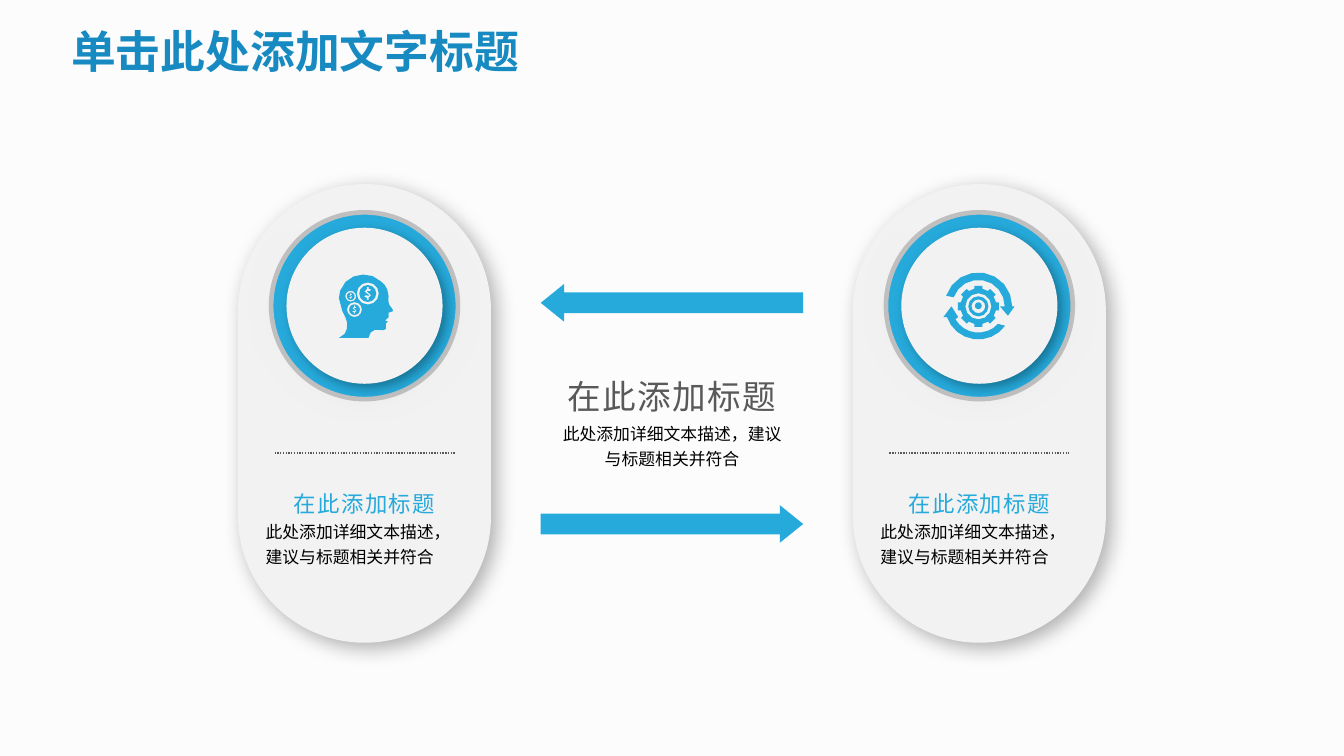
from math import cos, radians, sin

from lxml import etree
from pptx import Presentation
from pptx.dml.color import RGBColor
from pptx.enum.dml import MSO_LINE
from pptx.enum.shapes import MSO_CONNECTOR, MSO_SHAPE
from pptx.enum.text import MSO_ANCHOR, PP_ALIGN
from pptx.oxml.ns import qn
from pptx.util import Cm, Pt

FONT = "Noto Sans CJK SC"
C = {"bg": "FCFCFC", "title": "178AC1", "blue": "26AADB", "card": "F2F2F2",
     "ring": "BFBFBF", "white": "FFFFFF", "grey": "595959", "black": "000000",
     "deep": "12556E"}

TITLE = "单击此处添加文字标题"
HEAD = "在此添加标题"
BODY = "此处添加详细文本描述，建议与标题相关并符合"

CARD_X = {"head": 6.89, "gear": 18.51}
MID_X, DISC_Y = 12.7, 5.78
ARROWS = [(MSO_SHAPE.LEFT_ARROW, 5.37), (MSO_SHAPE.RIGHT_ARROW, 9.55)]
TEXTS = [
    (x, top, w, h, text, dict(size=Pt(size), color=C[color]), spc, align, gap)
    for x, rows in [(x, [(9.65, 4.24, 1.17, BODY, 9, "black", 0, PP_ALIGN.LEFT, 1.25),
                         (9.14, 4.9, 0.76, HEAD, 12, "blue", 80, PP_ALIGN.CENTER, 1)])
                    for x in CARD_X.values()]
    + [(MID_X, [(7.8, 4.75, 1.17, BODY, 9, "black", 0, PP_ALIGN.CENTER, 1.25),
                (6.98, 4.5, 1.02, HEAD, 18, "grey", 80, PP_ALIGN.CENTER, 1)])]
    for top, w, h, text, size, color, spc, align, gap in rows
]

PROFILE = [(175, -75), (165, -125), (145, -160), (115, -187), (55, -225), (-15, -236),
           (-85, -222), (-145, -182), (-186, -115), (-195, -60), (-170, 35), (-145, 85),
           (-133, 125), (-136, 170), (-152, 205), (-195, 236), (25, 236), (42, 195),
           (75, 175), (135, 178), (155, 170), (155, 128), (170, 115), (148, 106),
           (175, 82), (174, 48), (205, 38), (207, 27), (180, -12), (172, -40)]
DOLLAR = [(0.1, 0.5), (0.1, 0.75), (-0.1, 0.75), (-0.1, 0.52), (-0.4, 0.42), (-0.33, 0.22),
          (0.12, 0.26), (0.12, 0.16), (-0.38, -0.2), (-0.1, -0.56), (-0.1, -0.78),
          (0.1, -0.78), (0.1, -0.58), (0.36, -0.5), (0.3, -0.28), (-0.1, -0.28),
          (0.02, -0.14), (0.42, 0.2)]
COINS = [(-107, -75, 29, 40), (20, -95, 63, 82), (-79, 25, 40, 55)]


def arc(r, start, end, steps=8, cx=0, cy=0):
    angles = [radians(start + (end - start) * i / steps) for i in range(steps + 1)]
    return [(cx + r * cos(a), cy + r * sin(a)) for a in angles]


def circle(r, cx=0, cy=0, steps=12):
    return arc(r, 0, 360, steps, cx, cy)[:-1]


def head_icon():
    holes = [circle(hole, x, y) for x, y, r, hole in COINS]
    coins = [[circle(r, x, y), [(x + r * u, y + r * v) for u, v in DOLLAR]]
             for x, y, r, hole in COINS]
    return coins + [[PROFILE] + holes]


def gear_icon():
    teeth = [(r * cos(radians(a + d)), r * sin(radians(a + d)))
             for a in range(0, 360, 45)
             for r, d in [(134, -13), (156, -11), (156, 11), (134, 13)]]
    top = arc(252, -162, 0) + [(270, 0), (220, 70), (160, 0)] + arc(196, 0, -160)
    bottom = arc(247, 36, 161) + [(-260, 80), (-200, 0), (-150, 80)] + arc(196, 150, 42)
    return [[top], [bottom], [teeth, circle(97)], [circle(75), circle(51)]]


def paint(sp, color, shadow=None):
    sp.shadow.inherit = False
    sp.fill.solid()
    sp.fill.fore_color.rgb = RGBColor.from_string(color)
    sp.line.fill.background()
    if shadow:
        tint, alpha, blur, dist = shadow
        shdw = add_effect(sp, "outerShdw", blurRad=Pt(blur), dist=Pt(dist),
                          dir=2700000, algn="tl", rotWithShape=0)
        clr = etree.SubElement(shdw, qn("a:srgbClr"), val=tint)
        etree.SubElement(clr, qn("a:alpha"), val=str(alpha * 1000))


def add_effect(sp, tag, **attrs):
    effects = sp._element.spPr.find(qn("a:effectLst"))
    return etree.SubElement(effects, qn("a:" + tag), {k: str(v) for k, v in attrs.items()})


def add_disc(x, size):
    return s.shapes.add_shape(MSO_SHAPE.OVAL, Cm(x - size / 2), Cm(DISC_Y - size / 2),
                              Cm(size), Cm(size))


def draw_icon(x, parts):
    for first, *rest in parts:
        fb = s.shapes.build_freeform(*first[0], scale=Cm(0.00254))
        fb.add_line_segments(first[1:])
        for contour in rest:
            fb.move_to(*contour[0])
            fb.add_line_segments(contour[1:])
        paint(fb.convert_to_shape(Cm(x), Cm(DISC_Y + 0.01)), C["blue"])


def write(sp, text, fmt, spc=0, align=PP_ALIGN.LEFT, gap=1, wrap=True):
    tf = sp.text_frame
    tf.word_wrap = wrap
    tf.vertical_anchor = MSO_ANCHOR.MIDDLE
    p = tf.paragraphs[0]
    p.alignment, p.line_spacing = align, gap
    r = p.add_run()
    r.text = text
    for key, value in dict(fmt, name=FONT).items():
        if key == "color":
            r.font.color.rgb = RGBColor.from_string(value)
        else:
            setattr(r.font, key, value)
    rpr = r._r.get_or_add_rPr()
    etree.SubElement(rpr, qn("a:ea"), typeface=FONT)
    if spc:
        rpr.set("spc", str(spc))


prs = Presentation()
prs.slide_width, prs.slide_height = Cm(25.4), Cm(14.29)
s = prs.slides.add_slide(prs.slide_layouts[5])
s.background.fill.solid()
s.background.fill.fore_color.rgb = RGBColor.from_string(C["bg"])

title = s.shapes.title
title.left, title.top, title.width, title.height = Cm(1.09), Cm(0.33), Cm(9.07), Cm(1.27)
write(title, TITLE, dict(size=Pt(24), bold=True, color=C["title"]), wrap=False)

for name, x in CARD_X.items():
    card = s.shapes.add_shape(MSO_SHAPE.ROUNDED_RECTANGLE, Cm(x - 2.39), Cm(3.48),
                              Cm(4.78), Cm(8.67))
    card.adjustments[0] = 0.5
    paint(card, C["card"], (C["black"], 29, 11, 4))

    glow = add_disc(x, 4.85)
    paint(glow, C["white"])
    glow.fill.gradient()
    glow.fill.gradient_angle = 270
    for stop, color in zip(glow.fill.gradient_stops, ("white", "ring")):
        stop.color.rgb = RGBColor.from_string(C[color])
    add_effect(glow, "softEdge", rad=Cm(0.88))

    ring = add_disc(x, 3.53)
    paint(ring, C["blue"])
    ring.line.color.rgb = RGBColor.from_string(C["ring"])
    ring.line.width = Pt(2.5)
    paint(add_disc(x, 2.95), C["card"], (C["deep"], 64, 6, 3))

    rule = s.shapes.add_connector(MSO_CONNECTOR.STRAIGHT, Cm(x - 1.7), Cm(8.56),
                                  Cm(x + 1.7), Cm(8.56))
    rule.line.color.rgb = RGBColor.from_string(C["grey"])
    rule.line.width = Pt(0.75)
    rule.line.dash_style = MSO_LINE.ROUND_DOT
    etree.SubElement(rule._element.spPr, qn("a:effectLst"))

for kind, top in ARROWS:
    arrow = s.shapes.add_shape(kind, Cm(MID_X - 2.48), Cm(top), Cm(4.96), Cm(0.71))
    arrow.adjustments[0], arrow.adjustments[1] = 0.55, 0.62
    paint(arrow, C["blue"])

for x, top, w, h, text, fmt, spc, align, gap in TEXTS:
    box = s.shapes.add_textbox(Cm(x - w / 2), Cm(top), Cm(w), Cm(h))
    write(box, text, fmt, spc, align, gap)

draw_icon(CARD_X["gear"] - 0.02, gear_icon())
paint(add_disc(CARD_X["gear"] - 0.02, 0.13), C["blue"])
draw_icon(CARD_X["head"] + 0.01, head_icon())

prs.save("out.pptx")
